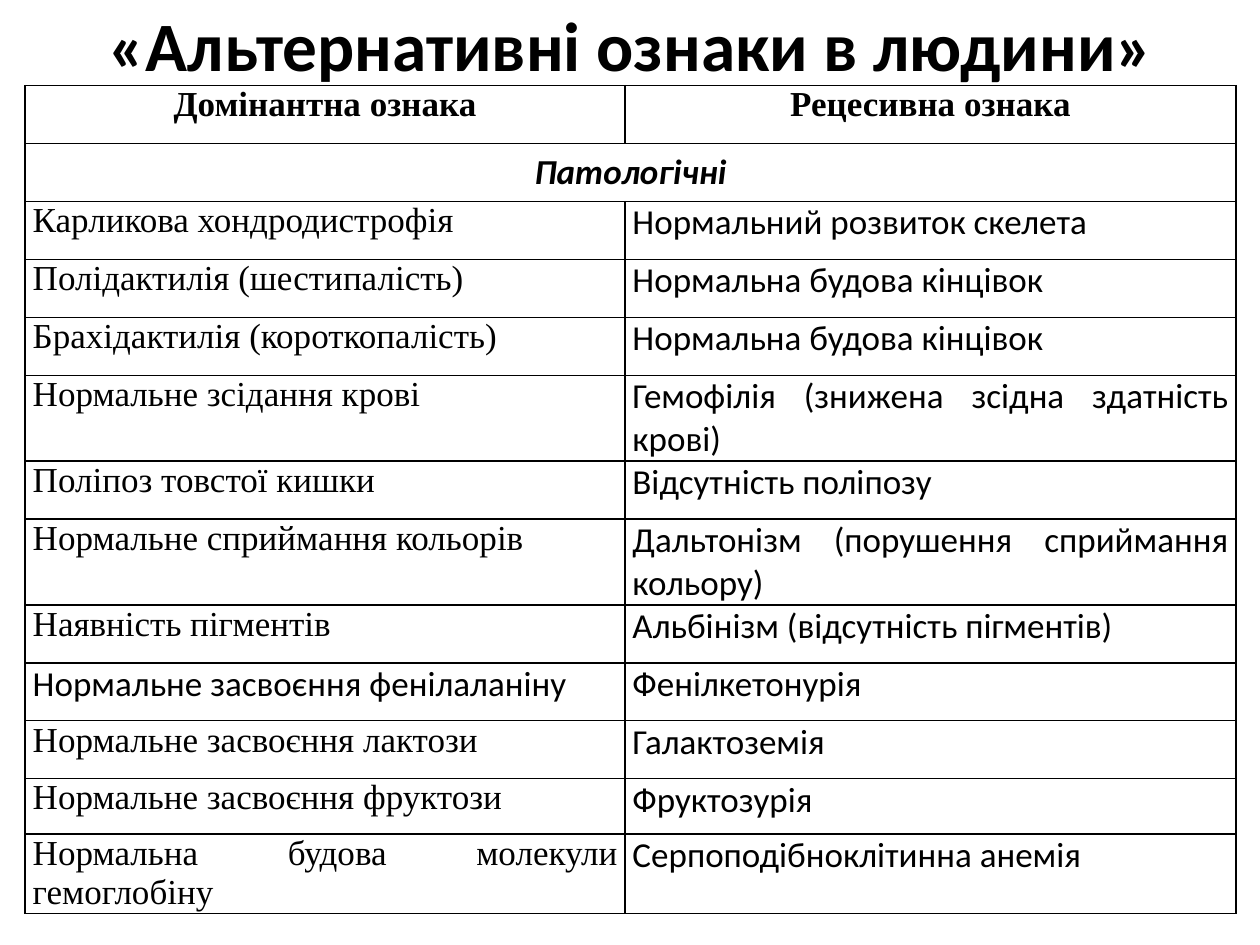
import pptx
import pptx.dml.color
import pptx.enum.text
import pptx.oxml.ns
import pptx.util
from lxml import etree

BLACK = pptx.dml.color.RGBColor(0x00, 0x00, 0x00)
SERIF, SANS = "Times New Roman", "Calibri"
ALIGN = pptx.enum.text.PP_ALIGN
ANCHOR = pptx.enum.text.MSO_ANCHOR
Inches, Pt = pptx.util.Inches, pptx.util.Pt

HEADINGS = ("Домінантна ознака", "Рецесивна ознака")
SECTION = "Патологічні"
TRAITS = [
    ("Карликова хондродистрофія", "Нормальний розвиток скелета"),
    ("Полідактилія (шестипалість)", "Нормальна будова кінцівок"),
    ("Брахідактилія (короткопалість)", "Нормальна будова кінцівок"),
    ("Нормальне зсідання крові", "Гемофілія (знижена зсідна здатність крові)"),
    ("Поліпоз товстої кишки", "Відсутність поліпозу"),
    ("Нормальне сприймання кольорів", "Дальтонізм (порушення сприймання кольору)"),
    ("Наявність пігментів", "Альбінізм (відсутність пігментів)"),
    ("Нормальне засвоєння фенілаланіну", "Фенілкетонурія"),
    ("Нормальне засвоєння лактози", "Галактоземія"),
    ("Нормальне засвоєння фруктози", "Фруктозурія"),
    ("Нормальна будова молекули гемоглобіну", "Серпоподібноклітинна анемія"),
]
SANS_TRAIT = "Нормальне засвоєння фенілаланіну"
COLUMN_WIDTHS = (4.76, 4.85)
ROW_HEIGHT = 0.46
SPECIAL_HEIGHTS = {5: 0.63, 7: 0.63, 11: 0.44, 12: 0.63}


def border_cell(cell):
    """Draw a thin black line on all four sides, under the cell's fill."""
    properties = cell._tc.get_or_add_tcPr()
    for position, side in enumerate(("a:lnL", "a:lnR", "a:lnT", "a:lnB")):
        line = etree.Element(pptx.oxml.ns.qn(side), w=str(Pt(1)))
        fill = etree.SubElement(line, pptx.oxml.ns.qn("a:solidFill"))
        etree.SubElement(fill, pptx.oxml.ns.qn("a:srgbClr"), val=str(BLACK))
        properties.insert(position, line)


def write_cell(cell, text, font_name, align, bold=False, italic=False):
    para = cell.text_frame.paragraphs[0]
    para.text = text
    para.alignment = align
    para.space_before = Pt(14)
    para.space_after = Pt(10 if font_name == SERIF else 0)
    para.font.name, para.font.size = font_name, Pt(20)
    para.font.bold, para.font.italic = bold, italic
    para.font.color.rgb = BLACK


deck = pptx.Presentation()
deck.slide_width, deck.slide_height = Inches(10), Inches(7.5)
page = deck.slides.add_slide(deck.slide_layouts[5])

# Title
title = page.shapes.title
title.left, title.top = Inches(0.51), 0
title.width, title.height = Inches(9), Inches(0.69)
title.text_frame.auto_size = pptx.enum.text.MSO_AUTO_SIZE.NONE
title.text_frame.vertical_anchor = ANCHOR.MIDDLE
para = title.text_frame.paragraphs[0]
para.text = "«Альтернативні ознаки в людини»"
para.alignment = ALIGN.CENTER
para.font.name, para.font.size, para.font.bold = SANS, Pt(39.6), True
para.font.color.rgb = BLACK

# Table grid
row_count = len(TRAITS) + 2
heights = [SPECIAL_HEIGHTS.get(row, ROW_HEIGHT) for row in range(row_count)]
table = page.shapes.add_table(
    row_count, 2, Inches(0.2), Inches(0.68),
    Inches(sum(COLUMN_WIDTHS)), Inches(sum(heights))).table
table.first_row = table.horz_banding = False
for column, width in zip(table.columns, COLUMN_WIDTHS):
    column.width = Inches(width)
for row, height in zip(table.rows, heights):
    row.height = Inches(height)
for cell in table.iter_cells():
    cell.margin_left = cell.margin_right = Inches(0.06)
    cell.margin_top = cell.margin_bottom = 0
    cell.fill.background()
    border_cell(cell)

# Headings and section row
for column, heading in enumerate(HEADINGS):
    write_cell(table.cell(0, column), heading, SERIF, ALIGN.CENTER, bold=True)
section = table.cell(1, 0)
section.merge(table.cell(1, 1))
section.vertical_anchor = ANCHOR.MIDDLE
write_cell(section, SECTION, SANS, ALIGN.CENTER, bold=True, italic=True)

# Pairs of traits
for row, (dominant, recessive) in enumerate(TRAITS, start=2):
    dominant_font = SANS if dominant == SANS_TRAIT else SERIF
    write_cell(table.cell(row, 0), dominant, dominant_font, ALIGN.JUSTIFY)
    write_cell(table.cell(row, 1), recessive, SANS, ALIGN.JUSTIFY)

deck.save("out.pptx")
